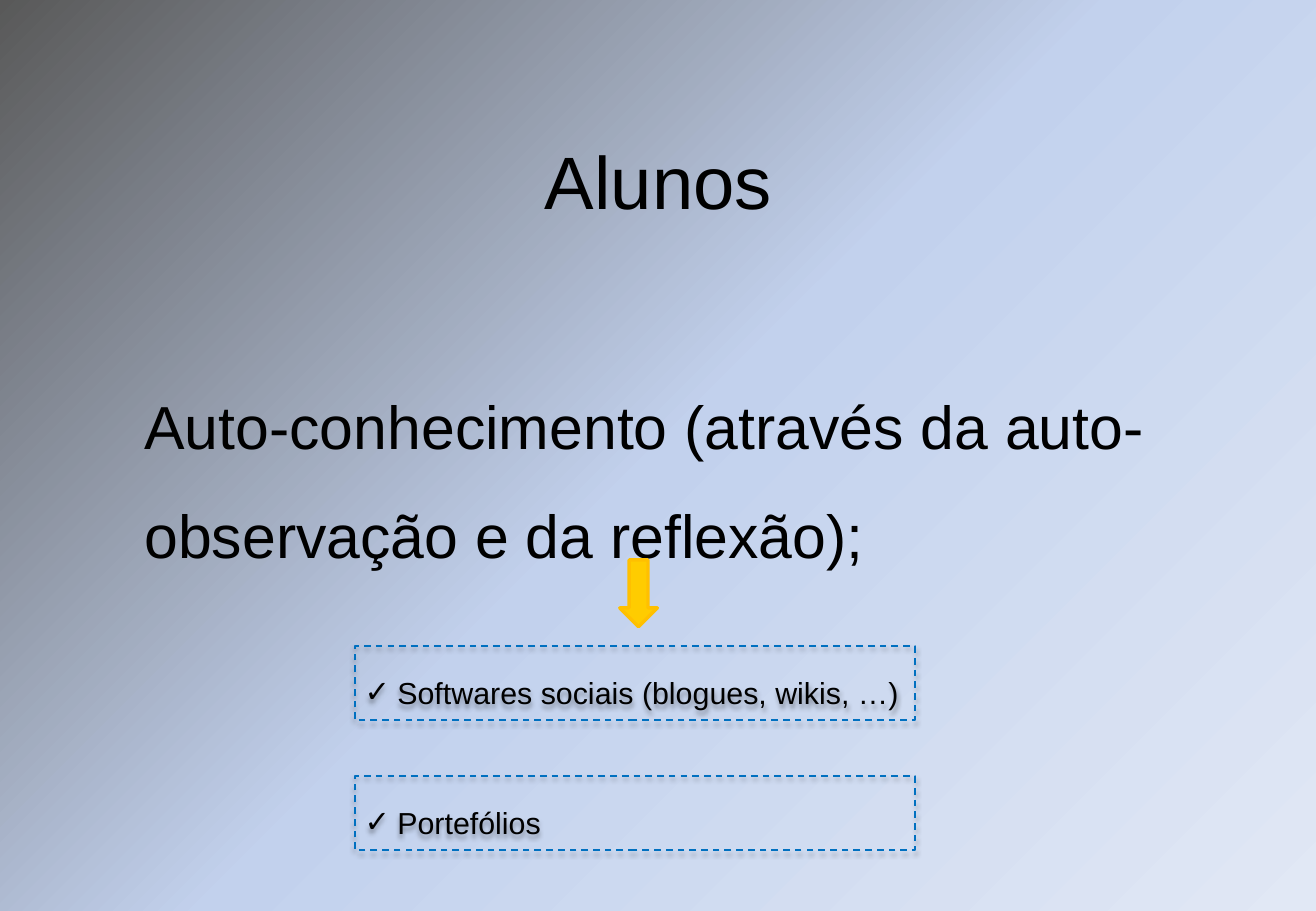
from dataclasses import dataclass

from lxml import etree
from pptx import Presentation
from pptx import util as u
from pptx.dml.color import RGBColor
from pptx.enum import dml, shapes, text
from pptx.oxml.ns import qn
from pptx.shapes.autoshape import Shape
from pptx.slide import Slide

COLORS = {
    "text": "000000",
    "arrow": "FFCC00",
    "arrow_edge": "FFC000",
    "tool_edge": "0070C0",
    "shadow": "000000",
}
BACKGROUND_STOPS = {0: "595959", 50: "C2D1ED", 100: "E1E8F5"}
FONT = "Arial"
TOOL_INSET = u.Inches(0.08)
BULLET_INDENT = u.Inches(0.27)


@dataclass(frozen=True)
class TextBlock:
    wording: str
    left: float
    top: float
    width: float
    height: float
    size: int
    align: text.PP_ALIGN = text.PP_ALIGN.LEFT


HEADINGS = [
    TextBlock("Auto-conhecimento (através da auto-observação e da reflexão);",
              1.09, 2.85, 8.65, 1.81, 36),
    TextBlock("Alunos", 4.17, 0.7, 2.5, 1.07, 44, text.PP_ALIGN.CENTER),
]
TOOLS = [
    TextBlock(wording, 2.92, 5.32 + row * 1.07, 4.61, 0.61, 18)
    for row, wording in enumerate(["Softwares sociais (blogues, wikis, …)", "Portefólios"])
]


def color(name: str) -> RGBColor:
    return RGBColor.from_string(COLORS[name])


def frame(block: TextBlock) -> list[u.Length]:
    return [u.Inches(n) for n in (block.left, block.top, block.width, block.height)]


def paint_background(page: Slide) -> None:
    fill = page.background.fill
    fill.gradient()
    fill.gradient_angle = 315
    stops = page.element.find(".//" + qn("a:gsLst"))
    for stop in list(stops):
        stops.remove(stop)
    for percent, value in BACKGROUND_STOPS.items():
        stop = etree.SubElement(stops, qn("a:gs"), pos=str(percent * 1000))
        etree.SubElement(stop, qn("a:srgbClr"), val=value)


def write_text(box: Shape, block: TextBlock) -> None:
    box.text_frame.word_wrap = True
    para = box.text_frame.paragraphs[0]
    para.text = block.wording
    para.alignment = block.align
    para.line_spacing = 1.5
    para.font.name = FONT
    para.font.size = u.Pt(block.size)
    para.font.color.rgb = color("text")


def add_heading(page: Slide, block: TextBlock) -> None:
    write_text(page.shapes.add_textbox(*frame(block)), block)


def add_arrow(page: Slide) -> None:
    arrow = page.shapes.add_shape(
        shapes.MSO_SHAPE.DOWN_ARROW,
        u.Inches(5.1), u.Inches(4.61), u.Inches(0.31), u.Inches(0.55))
    arrow.shadow.inherit = False
    arrow.fill.solid()
    arrow.fill.fore_color.rgb = color("arrow")
    arrow.line.color.rgb = color("arrow_edge")
    arrow.line.width = u.Pt(2)


def add_soft_shadow(box: Shape) -> None:
    box.shadow.inherit = False
    effects = box.element.spPr.find(qn("a:effectLst"))
    shadow = etree.SubElement(
        effects, qn("a:outerShdw"), blurRad=str(u.Pt(3.1)), dist=str(u.Pt(1.8)),
        dir=str(90 * 60000), rotWithShape="0")
    tint = etree.SubElement(shadow, qn("a:srgbClr"), val=COLORS["shadow"])
    etree.SubElement(tint, qn("a:alpha"), val="35000")


def add_check_bullet(box: Shape) -> None:
    properties = box.text_frame.paragraphs[0]._p.get_or_add_pPr()
    properties.set("marL", str(BULLET_INDENT))
    properties.set("indent", str(-BULLET_INDENT))
    etree.SubElement(properties, qn("a:buFont"), typeface=FONT)
    etree.SubElement(properties, qn("a:buChar"), char="✓")
    # The schema puts the default run properties after the bullet.
    defaults = properties.find(qn("a:defRPr"))
    if defaults is not None:
        properties.append(defaults)


def add_tool(page: Slide, block: TextBlock) -> None:
    """Draw a dashed box that names one tool behind a check mark."""
    box = page.shapes.add_shape(shapes.MSO_SHAPE.RECTANGLE, *frame(block))
    box.fill.background()
    box.line.color.rgb = color("tool_edge")
    box.line.width = u.Pt(1)
    box.line.dash_style = dml.MSO_LINE.DASH
    add_soft_shadow(box)
    body = box.text_frame
    body.margin_left = body.margin_right = TOOL_INSET
    body.margin_top = body.margin_bottom = TOOL_INSET
    body.vertical_anchor = text.MSO_ANCHOR.MIDDLE
    write_text(box, block)
    add_check_bullet(box)


def main() -> None:
    deck = Presentation()
    deck.slide_width, deck.slide_height = u.Inches(10.83), u.Inches(7.5)
    page = deck.slides.add_slide(deck.slide_layouts[6])
    paint_background(page)
    for heading in HEADINGS:
        add_heading(page, heading)
    add_arrow(page)
    for tool in TOOLS:
        add_tool(page, tool)
    deck.save("out.pptx")


if __name__ == "__main__":
    main()
